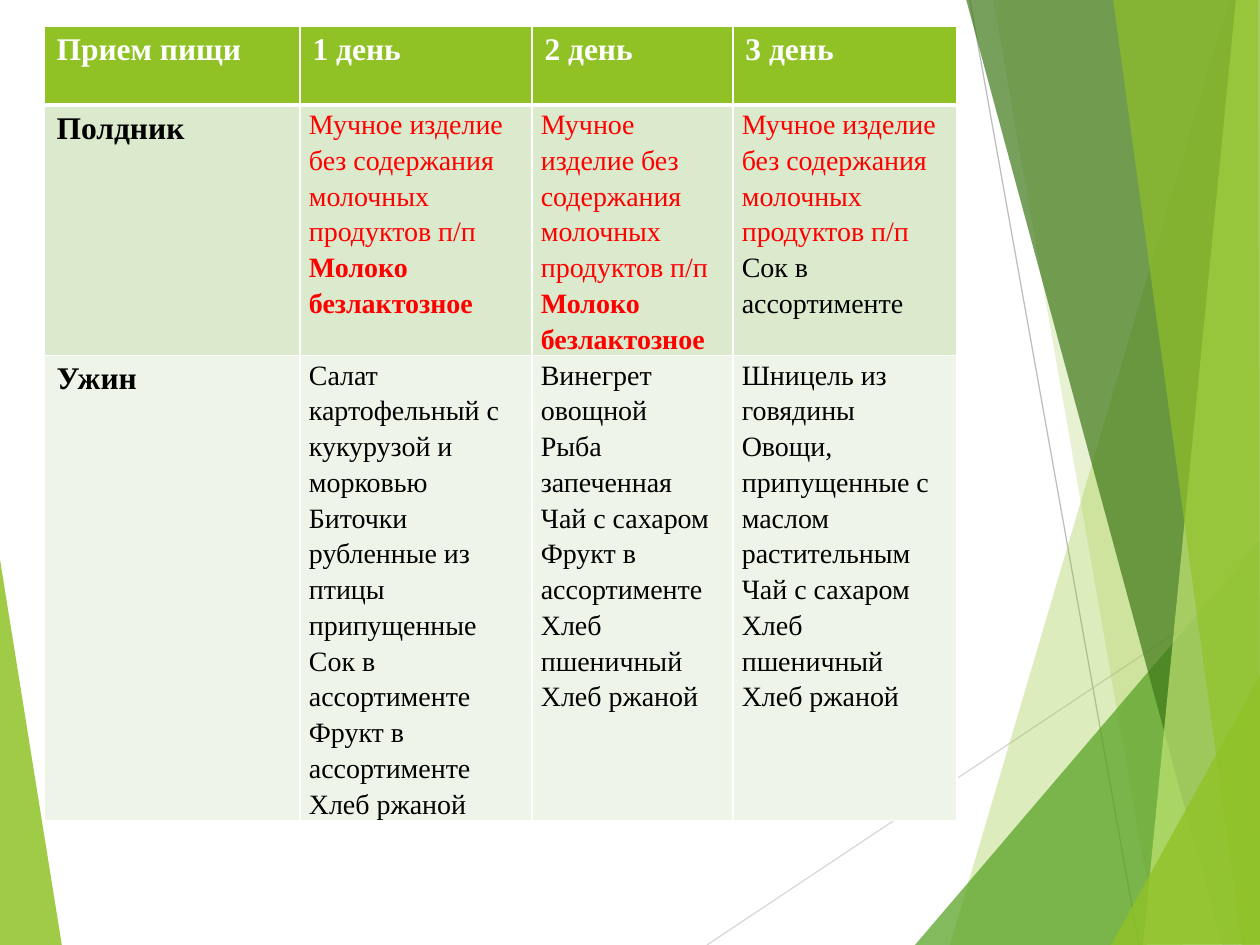
from lxml.etree import SubElement
from pptx import Presentation
from pptx.dml.color import RGBColor
from pptx.enum.shapes import MSO_CONNECTOR
from pptx.oxml.ns import qn
from pptx.util import Pt

SCALE = 914400 / 126
FONT = "Times New Roman"
WHITE, BLACK, RED, GREEN = "FFFFFF", "000000", "FF0000", "90C226"


def px(length):
    return round(length * SCALE)


def rgb(color):
    return RGBColor.from_string(color)


deck = Presentation()
deck.slide_width, deck.slide_height = px(1260), px(945)
page = deck.slides.add_slide(deck.slide_layouts[6])

# Background: one left wedge, two thin lines, then overlapping right-hand facets
left_wedge = (GREEN, 85, [(-1, 553), (62, 946), (-1, 945)])
right_facets = [
    (GREEN, 30, [(1229, 0), (950, 945), (1262, 946), (1261, 1)]),
    (GREEN, 20, [(993, -1), (1158, 945), (1261, 945), (1261, -1)]),
    ("54A021", 72, [(915, 945), (1260, 541), (1261, 945)]),
    ("3F7819", 70, [(966, -1), (1222, 945), (1261, 944), (1261, -1)]),
    ("C0E474", 70, [(1236, -1), (1143, 945), (1261, 945), (1260, -1)]),
    (GREEN, 65, [(1113, -1), (1242, 945), (1260, 945), (1258, -1)]),
    (GREEN, 80, [(1111, 945), (1261, 674), (1261, 944)]),
]
thin_lines = [("D9D9D9", 707, 945, 1261, 576), ("BFBFBF", 970, 0, 1139, 945)]

for color, x1, y1, x2, y2 in thin_lines:
    line = page.shapes.add_connector(
        MSO_CONNECTOR.STRAIGHT, px(x1), px(y1), px(x2), px(y2))
    line.line.color.rgb = rgb(color)
    line.line.width = Pt(0.75)
    SubElement(line._element.spPr, qn("a:effectLst"))

for color, opacity, points in [left_wedge] + right_facets:
    builder = page.shapes.build_freeform(*points[0], scale=SCALE)
    builder.add_line_segments(points[1:], close=True)
    facet = builder.convert_to_shape()
    facet.shadow.inherit = False
    facet.line.fill.background()
    facet.fill.solid()
    facet.fill.fore_color.rgb = rgb(color)
    color_node = facet._element.spPr.find(f"{qn('a:solidFill')}/{qn('a:srgbClr')}")
    SubElement(color_node, qn("a:alpha"), val=str(opacity * 1000))

# Menu: each cell holds its paragraphs, one per line
pastry = "Мучное изделие без содержания молочных продуктов п/п"
milk = "Молоко безлактозное"
juice = "Сок в ассортименте"
fruit = "Фрукт в ассортименте"
tea = "Чай с сахаром"
wheat, rye = "Хлеб пшеничный", "Хлеб ржаной"
menu = [
    [["Прием пищи"], ["1 день"], ["2 день"], ["3 день"]],
    [["Полдник"], [pastry, milk], [pastry, milk], [pastry, juice]],
    [["Ужин"],
     ["Салат картофельный с кукурузой и морковью",
      "Биточки рубленные из птицы припущенные", juice, fruit, rye],
     ["Винегрет овощной", "Рыба запеченная", tea, fruit, wheat, rye],
     ["Шницель из говядины", "Овощи, припущенные с маслом растительным",
      tea, wheat, rye]],
]
row_fills = [GREEN, "DBE9CD", "EEF4E8"]
column_widths = [256, 232, 201, 224]
row_heights = [79, 250, 465]

table = page.shapes.add_table(
    len(row_heights), len(column_widths), px(44), px(26),
    px(sum(column_widths)), px(sum(row_heights))).table
for column, width in zip(table.columns, column_widths):
    column.width = px(width)
for row, height in zip(table.rows, row_heights):
    row.height = px(height)

for r, row in enumerate(menu):
    for c, dishes in enumerate(row):
        cell = table.cell(r, c)
        is_heading = r == 0 or c == 0
        for side in ("lnL", "lnR", "lnT", "lnB"):
            below_header = (r, side) in ((0, "lnB"), (1, "lnT"))
            border = SubElement(cell._tc.get_or_add_tcPr(), qn(f"a:{side}"),
                                w=str(Pt(3 if below_header else 1)))
            fill = SubElement(border, qn("a:solidFill"))
            SubElement(fill, qn("a:srgbClr"), val=WHITE)
        cell.fill.solid()
        cell.fill.fore_color.rgb = rgb(row_fills[r])
        if not is_heading:
            cell.margin_left = cell.margin_right = px(9)
            cell.margin_top = cell.margin_bottom = 0

        cell.text_frame.text = "\n".join(dishes)
        for para in cell.text_frame.paragraphs:
            if not is_heading:
                para.line_spacing = 1.15
            if r == 0:
                color = WHITE
            else:
                color = RED if para.text in (pastry, milk) else BLACK
            for span in para.runs:
                span.font.name = FONT
                span.font.size = Pt(18 if is_heading else 16)
                span.font.bold = is_heading or para.text == milk
                span.font.color.rgb = rgb(color)

deck.save("out.pptx")
